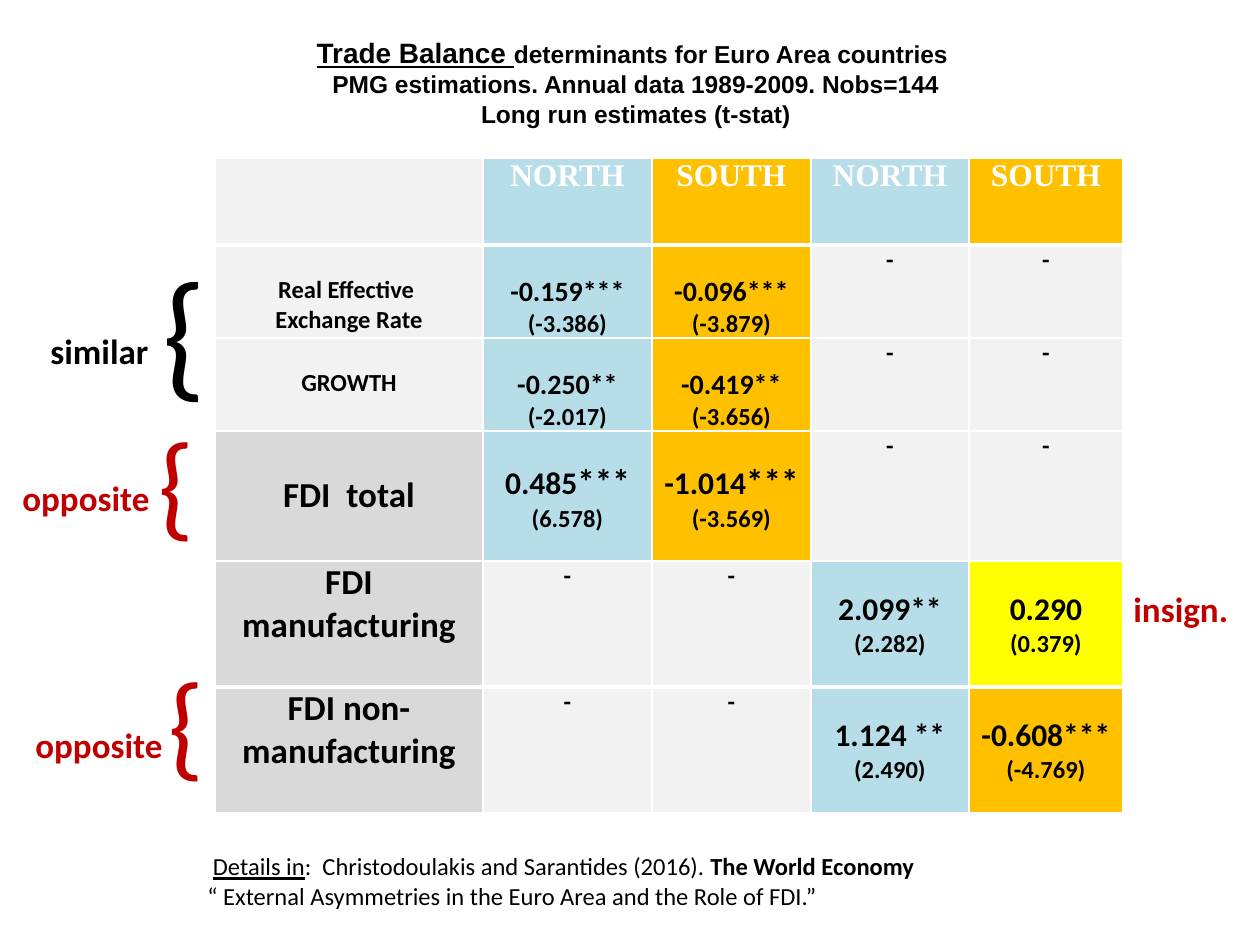
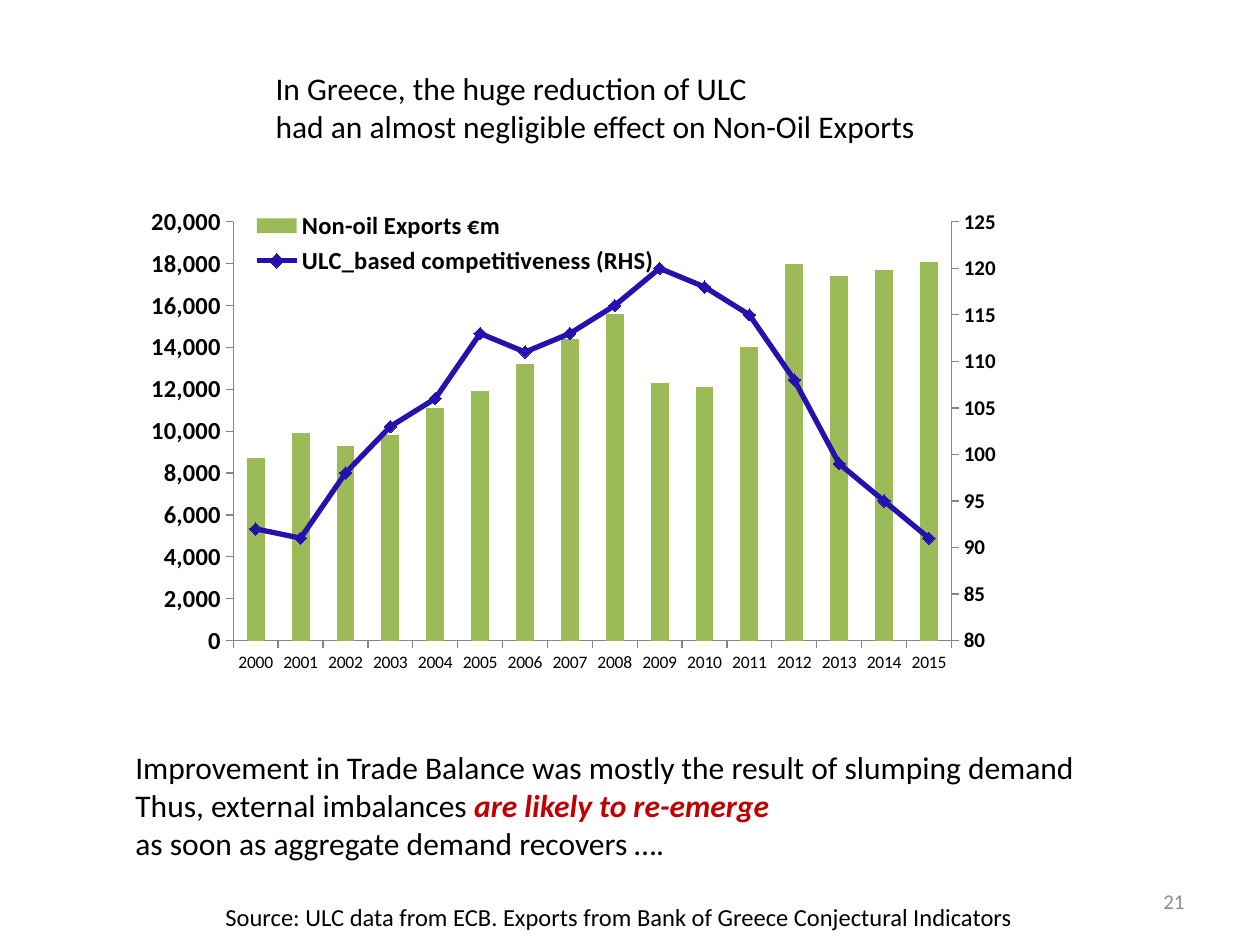
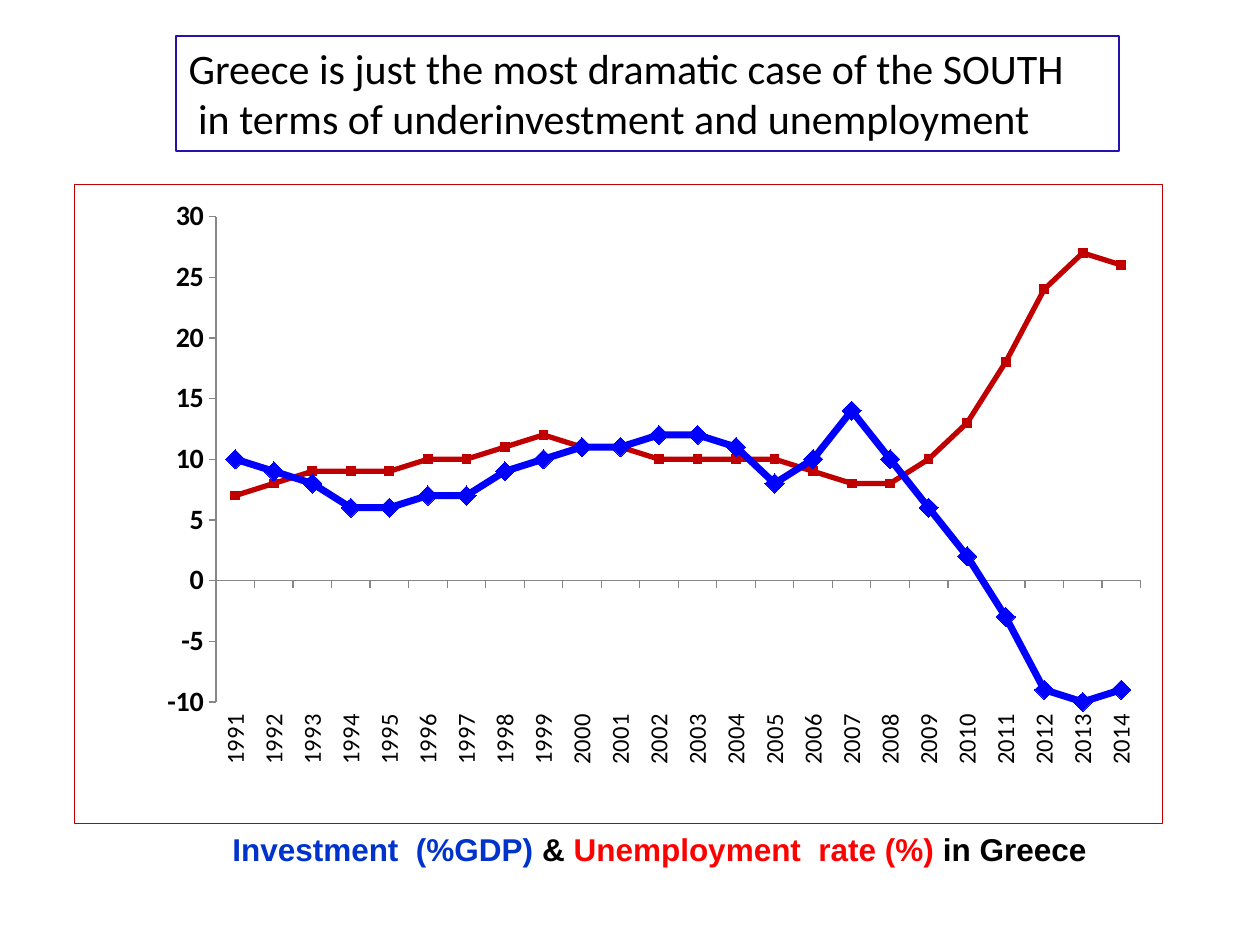
from dataclasses import dataclass
from pptx import Presentation
from pptx.chart.data import CategoryChartData
from pptx.dml.color import RGBColor
from pptx.enum.chart import (XL_CHART_TYPE, XL_LEGEND_POSITION, XL_MARKER_STYLE,
                             XL_TICK_LABEL_POSITION, XL_TICK_MARK)
from pptx.enum.text import MSO_ANCHOR, MSO_AUTO_SIZE, PP_ALIGN
from pptx.oxml import parse_xml
from pptx.oxml.ns import nsdecls, qn
from pptx.util import Pt

LEFT, CENTER, RIGHT = PP_ALIGN.LEFT, PP_ALIGN.CENTER, PP_ALIGN.RIGHT
TOP, MIDDLE = MSO_ANCHOR.TOP, MSO_ANCHOR.MIDDLE
FIT, FIXED = MSO_AUTO_SIZE.SHAPE_TO_FIT_TEXT, MSO_AUTO_SIZE.NONE
COLUMNS, LINES = XL_CHART_TYPE.COLUMN_CLUSTERED, XL_CHART_TYPE.LINE_MARKERS
DIAMOND, SQUARE = XL_MARKER_STYLE.DIAMOND, XL_MARKER_STYLE.SQUARE
TICK_OUT, LABELS_LOW = XL_TICK_MARK.OUTSIDE, XL_TICK_LABEL_POSITION.LOW
LEGEND_RIGHT = XL_LEGEND_POSITION.RIGHT


@dataclass(frozen=True)
class Theme:
    body: str = "Calibri"
    head: str = "Arial"
    serif: str = "Times New Roman"
    black: str = "000000"
    white: str = "FFFFFF"
    red: str = "C00000"
    bright_red: str = "FF0000"
    blue: str = "0000FF"
    caption_blue: str = "0033CC"
    indigo: str = "2512AE"
    green: str = "9BBB59"
    axis: str = "868686"
    page: str = "8C8C8C"
    north: str = "B7DEE8"
    south: str = "FFC000"
    weak: str = "FFFF00"
    pale: str = "F2F2F2"
    label: str = "D9D9D9"
    tiny: int = 10
    small: int = 12
    note: int = 14
    value: int = 16
    text: int = 18
    large: int = 20
    title: int = 24


T = Theme()
SCALE = 914400 / 126
SLIDE_W, SLIDE_H = 1260, 945

BALANCE_TITLE = [
    [("Trade Balance ", T.value, T.black, "bu"),
     ("determinants for Euro Area countries ", T.note, T.black, "b")],
    [("PMG estimations. Annual data 1989-2009. Nobs=144", T.note, T.black, "b")],
    [("Long run estimates (t-stat)", T.note, T.black, "b")],
]
TABLE_AT = (215, 158)
TABLE_COLS = [268, 169, 159, 158, 154]
TABLE_ROWS = [87, 92, 92, 130, 126, 126]
REGIONS = ["NORTH", "SOUTH", "NORTH", "SOUTH"]
ESTIMATES = [
    (["Real Effective ", "Exchange Rate"], T.note,
     [("-0.159", "***", "(-3.386)"), ("-0.096", "***", "(-3.879)"), None, None]),
    (["GROWTH"], T.note,
     [("-0.250", "**", "(-2.017)"), ("-0.419", "**", "(-3.656)"), None, None]),
    (["FDI  total"], T.large,
     [("0.485", "***", "(6.578)"), ("-1.014", "***", "(-3.569)"), None, None]),
    (["FDI manufacturing"], T.large,
     [None, None, ("2.099", "**", "(2.282)"), ("0.290", "", "(0.379)")]),
    (["FDI non-manufacturing"], T.large,
     [None, None, ("1.124 ", "**", "(2.490)"), ("-0.608", "***", "(-4.769)")]),
]
TOTAL_ROW = 3
CELL_SIDE, BLANK_LINE = 9, 30
BRACES = [
    ((150, 265, 69, 183), 80, T.black),
    ((145, 428, 62, 152), 66, T.red),
    ((155, 668, 62, 152), 66, T.red),
]
VERDICTS = [
    ("similar", (38, 323, 125, 55), T.black),
    ("opposite", (10, 470, 154, 55), T.red),
    ("opposite", (23, 717, 154, 55), T.red),
    ("insign.", (1121, 581, 121, 55), T.red),
]
DETAILS = [
    [(" ", T.note, T.black, ""), ("Details in", T.note, T.black, "u"),
     (":  Christodoulakis and Sarantides (2016). ", T.note, T.black, ""),
     ("The World Economy", T.note, T.black, "b")],
    [("“ External Asymmetries in the Euro Area and the Role of FDI.”", T.note, T.black, "")],
]

EXPORT_TITLE = [
    [("In Greece, the huge reduction of ULC", T.text, T.black, "")],
    [("had an almost negligible effect on Non-Oil Exports", T.text, T.black, "")],
]
EXPORT_YEARS = range(2000, 2016)
EXPORTS = [8700, 9900, 9300, 9800, 11100, 11900, 13200, 14400,
           15600, 12300, 12100, 14000, 18000, 17400, 17700, 18100]
COMPETITIVENESS = [92, 91, 98, 103, 106, 113, 111, 113,
                   116, 120, 118, 115, 108, 99, 95, 91]
OUTLOOK = [
    [("Improvement in Trade Balance was mostly the result of slumping demand",
      T.text, T.black, "")],
    [("Thus, external imbalances ", T.text, T.black, ""),
     ("are likely to re-emerge", T.text, T.red, "bi")],
    [("as soon as aggregate demand recovers ….", T.text, T.black, "")],
]
SOURCE = [[("Source: ULC data from ECB. Exports from Bank of Greece Conjectural Indicators",
            T.note, T.black, "")]]
PAGE_NUMBER = [[("21", T.small, T.page, "")]]

GREECE_TITLE = [
    [("Greece is just the most dramatic case of the SOUTH", T.title, T.black, "")],
    [(" in terms of underinvestment and unemployment", T.title, T.black, "")],
]
GREECE_YEARS = range(1991, 2015)
UNEMPLOYMENT = [7, 8, 9, 9, 9, 10, 10, 11, 12, 11, 11, 10,
                10, 10, 10, 9, 8, 8, 10, 13, 18, 24, 27, 26]
INVESTMENT = [10, 9, 8, 6, 6, 7, 7, 9, 10, 11, 11, 12,
              12, 11, 8, 10, 14, 10, 6, 2, -3, -9, -10, -9]
CAPTION = [[
    ("Investment  (%GDP) ", T.text, T.caption_blue, "b"), ("& ", T.text, T.black, "b"),
    ("Unemployment  rate (%)", T.text, T.bright_red, "b"),
    (" in Greece", T.text, T.black, "b"),
]]


def px(n):
    return round(n * SCALE)


def rgb(color):
    return RGBColor.from_string(color)


def write(tf, paragraphs, font=T.body, align=LEFT):
    for i, runs in enumerate(paragraphs):
        p = tf.paragraphs[0] if i == 0 else tf.add_paragraph()
        p.alignment = align
        for text, size, color, flags in runs:
            r = p.add_run()
            r.text = text
            f = r.font
            f.name, f.size, f.color.rgb = font, Pt(size), rgb(color)
            f.bold, f.italic, f.underline = "b" in flags, "i" in flags, "u" in flags


def fill_box(sp, at, paragraphs, font=T.body, align=LEFT, anchor=TOP, wrap=True, fit=FIT):
    sp.left, sp.top, sp.width, sp.height = map(px, at)
    tf = sp.text_frame
    tf.word_wrap, tf.vertical_anchor, tf.auto_size = wrap, anchor, fit
    write(tf, paragraphs, font, align)
    return sp


def add_text(s, at, paragraphs, **options):
    return fill_box(s.shapes.add_textbox(0, 0, 0, 0), at, paragraphs, **options)


def add_slide(prs, at, title, **options):
    s = prs.slides.add_slide(prs.slide_layouts[5])
    fill_box(s.shapes.title, at, title, **options)
    return s


def style_cell(cell, fill, top=1, bottom=1):
    for side, width in zip("LRTB", (1, 1, top, bottom)):
        cell._tc.get_or_add_tcPr().append(parse_xml(
            f'<a:ln{side} {nsdecls("a")} w="{Pt(width)}"><a:solidFill>'
            f'<a:srgbClr val="{T.white}"/></a:solidFill></a:ln{side}>'))
    cell.fill.solid()
    cell.fill.fore_color.rgb = rgb(fill)
    cell.margin_left = cell.margin_right = px(CELL_SIDE)
    cell.margin_top = cell.margin_bottom = 0


def add_estimates(s):
    table = s.shapes.add_table(len(TABLE_ROWS), len(TABLE_COLS), *map(px, TABLE_AT),
                               px(sum(TABLE_COLS)), px(sum(TABLE_ROWS))).table
    table.first_row = table.horz_banding = False
    for col, width in zip(table.columns, TABLE_COLS):
        col.width = px(width)
    for row, height in zip(table.rows, TABLE_ROWS):
        row.height = px(height)
    region_fill = {"NORTH": T.north, "SOUTH": T.south}
    style_cell(table.cell(0, 0), T.pale, bottom=3)
    for c, region in enumerate(REGIONS, 1):
        cell = table.cell(0, c)
        style_cell(cell, region_fill[region], bottom=3)
        write(cell.text_frame, [[(region, T.text, T.white, "b")]], T.serif, CENTER)
    for r, (label, size, values) in enumerate(ESTIMATES, 1):
        top = 3 if r in (1, len(ESTIMATES)) else 1
        bottom = 3 if r == len(ESTIMATES) - 1 else 1
        is_fdi = size == T.large
        cell = table.cell(r, 0)
        style_cell(cell, T.label if is_fdi else T.pale, top, bottom)
        if not is_fdi:
            cell.margin_top = px(BLANK_LINE)
        if r == TOTAL_ROW:
            cell.vertical_anchor = MIDDLE
        write(cell.text_frame, [[(line, size, T.black, "b")] for line in label], align=CENTER)
        number_size = T.text if is_fdi else T.value
        star_size = T.large if r == TOTAL_ROW else number_size
        for c, value in enumerate(values, 1):
            cell = table.cell(r, c)
            if value is None:
                style_cell(cell, T.pale, top, bottom)
                lines = [[("-", T.note, T.black, "b")]]
            else:
                number, stars, t_stat = value
                style_cell(cell, region_fill[REGIONS[c - 1]] if stars else T.weak, top, bottom)
                cell.margin_top = px(BLANK_LINE)
                lines = [[(number, number_size, T.black, "b")],
                         [(t_stat, T.note, T.black, "b")]]
                if stars:
                    lines[0].append((stars, star_size, T.black, "b"))
            write(cell.text_frame, lines, align=CENTER)


def layout_xml(x, y, w, h, inner=False):
    target = '<c:layoutTarget val="inner"/>' if inner else ""
    sizes = "".join(f'<c:{k} val="{v}"/>' for k, v in zip("xywh", (x, y, w, h)))
    return parse_xml(f'<c:layout {nsdecls("c")}><c:manualLayout>{target}'
                     f'<c:xMode val="edge"/><c:yMode val="edge"/>{sizes}'
                     '</c:manualLayout></c:layout>')


def drop_children(parent, tag):
    for child in parent.findall(qn(tag)):
        parent.remove(child)


def add_chart(s, kind, at, years, series, plot):
    data = CategoryChartData()
    data.categories = [str(year) for year in years]
    for name, values in series:
        data.add_series(name, values)
    chart = s.shapes.add_chart(kind, *map(px, at), data).chart
    chart.has_title = chart.has_legend = False
    f = chart.font
    f.name, f.size, f.color.rgb = T.body, Pt(T.tiny), rgb(T.black)
    area = chart._chartSpace.chart.plotArea
    drop_children(area, "c:layout")
    area.insert(0, layout_xml(*plot, inner=True))
    chart.plots[0].vary_by_categories = False
    return chart


def style_axis(axis, size, bold=False):
    axis.has_major_gridlines = False
    axis.major_tick_mark = TICK_OUT
    axis.format.line.color.rgb = rgb(T.axis)
    f = axis.tick_labels.font
    f.size, f.bold = Pt(size), bold


def style_value_axis(axis, size, low, high, step, number_format):
    style_axis(axis, size, True)
    axis.minimum_scale, axis.maximum_scale, axis.major_unit = low, high, step
    axis.tick_labels.number_format = number_format
    axis.tick_labels.number_format_is_linked = False


def style_line(ser, color, width, marker, size):
    ser.smooth = False
    ser.format.line.color.rgb = rgb(color)
    ser.format.line.width = Pt(width)
    ser.marker.style, ser.marker.size = marker, size
    ser.marker.format.fill.solid()
    ser.marker.format.fill.fore_color.rgb = rgb(color)
    ser.marker.format.line.color.rgb = rgb(color)


def move_to_right_axis(chart, low, high, step):
    area = chart._chartSpace.chart.plotArea
    bars = area.find(qn("c:barChart"))
    ser = bars.findall(qn("c:ser"))[1]
    drop_children(ser, "c:invertIfNegative")
    lines = parse_xml(
        f'<c:lineChart {nsdecls("c")}><c:grouping val="standard"/><c:varyColors val="0"/>'
        '<c:marker val="1"/><c:axId val="5001"/><c:axId val="5002"/></c:lineChart>')
    lines.insert(2, ser)
    bars.addnext(lines)
    area.append(parse_xml(
        f'<c:catAx {nsdecls("c")}><c:axId val="5001"/><c:scaling/><c:delete val="1"/>'
        '<c:axPos val="b"/><c:crossAx val="5002"/></c:catAx>'))
    area.append(parse_xml(
        f'<c:valAx {nsdecls("c", "a")}><c:axId val="5002"/><c:scaling>'
        f'<c:orientation val="minMax"/><c:max val="{high}"/><c:min val="{low}"/></c:scaling>'
        '<c:delete val="0"/><c:axPos val="r"/><c:numFmt formatCode="0" sourceLinked="0"/>'
        '<c:majorTickMark val="out"/><c:minorTickMark val="none"/><c:tickLblPos val="nextTo"/>'
        f'<c:spPr><a:ln><a:solidFill><a:srgbClr val="{T.axis}"/></a:solidFill></a:ln></c:spPr>'
        f'<c:txPr><a:bodyPr/><a:p><a:pPr><a:defRPr sz="{T.small * 100}" b="1"/></a:pPr></a:p>'
        '</c:txPr><c:crossAx val="5001"/><c:crosses val="max"/>'
        f'<c:majorUnit val="{step}"/></c:valAx>'))


def build_balance(prs):
    s = add_slide(prs, (302, 29, 668, 106), BALANCE_TITLE,
                  font=T.head, align=CENTER, anchor=MIDDLE, wrap=False)
    add_estimates(s)
    for at, size, color in BRACES:
        add_text(s, at, [[("}", size, color, "")]], wrap=False).rotation = 180
    for word, at, color in VERDICTS:
        add_text(s, at, [[(word, T.large, color, "b")]], wrap=False)
    add_text(s, (195, 845, 948, 72), DETAILS)


def build_exports(prs):
    s = add_slide(prs, (263, 63, 713, 89), EXPORT_TITLE)
    add_text(s, (903, 876, 294, 50), PAGE_NUMBER, align=RIGHT, anchor=MIDDLE, fit=FIXED)
    chart = add_chart(s, COLUMNS, (101, 195, 945, 537), EXPORT_YEARS,
                      [("Non-oil Exports €m", EXPORTS),
                       ("ULC_based competitiveness (RHS)", COMPETITIVENESS)],
                      (0.14, 0.05, 0.76, 0.78))
    style_axis(chart.category_axis, T.tiny)
    style_value_axis(chart.value_axis, T.note, 0, 20000, 2000, "#,##0")
    move_to_right_axis(chart, 80, 125, 5)
    bars, lines = chart.plots
    bars.gap_width = 150
    fill = bars.series[0].format.fill
    fill.solid()
    fill.fore_color.rgb = rgb(T.green)
    style_line(lines.series[0], T.indigo, 3, DIAMOND, 7)
    chart.has_legend = True
    legend = chart.legend
    legend.position, legend.include_in_layout = LEGEND_RIGHT, False
    legend.font.size, legend.font.bold = Pt(T.note), True
    drop_children(legend._element, "c:layout")
    drop_children(legend._element, "c:legendPos")
    legend._element.insert(0, parse_xml(f'<c:legendPos {nsdecls("c")} val="r"/>'))
    legend._element.insert(1, layout_xml(0.15, 0.02, 0.45, 0.14))
    add_text(s, (213, 896, 824, 43), SOURCE)
    add_text(s, (123, 742, 1022, 127), OUTLOOK)


def build_greece(prs):
    s = add_slide(prs, (176, 36, 943, 115), GREECE_TITLE)
    border = s.shapes.title.line
    border.color.rgb, border.width = rgb(T.indigo), Pt(0.75)
    chart = add_chart(s, LINES, (74, 184, 1089, 640), GREECE_YEARS,
                      [("Series 1", UNEMPLOYMENT), ("Series 2", INVESTMENT)],
                      (0.13, 0.05, 0.85, 0.76))
    style_axis(chart.category_axis, T.note)
    chart.category_axis.tick_label_position = LABELS_LOW
    labels = chart.category_axis._element.find(qn("c:txPr"))
    labels.find(qn("a:bodyPr")).set("rot", "-5400000")
    style_value_axis(chart.value_axis, T.value, -10, 30, 5, "0")
    unemployment, investment = chart.plots[0].series
    style_line(unemployment, T.red, 3, SQUARE, 5)
    style_line(investment, T.blue, 4, DIAMOND, 11)
    chart._chartSpace.chart.addnext(parse_xml(
        f'<c:spPr {nsdecls("c", "a")}><a:ln w="{Pt(0.75)}"><a:solidFill>'
        f'<a:srgbClr val="{T.red}"/></a:solidFill></a:ln></c:spPr>'))
    add_text(s, (173, 824, 973, 50), CAPTION, font=T.head, align=CENTER)


def main():
    prs = Presentation()
    prs.slide_width, prs.slide_height = px(SLIDE_W), px(SLIDE_H)
    build_balance(prs)
    build_exports(prs)
    build_greece(prs)
    prs.save("out.pptx")


if __name__ == "__main__":
    main()
